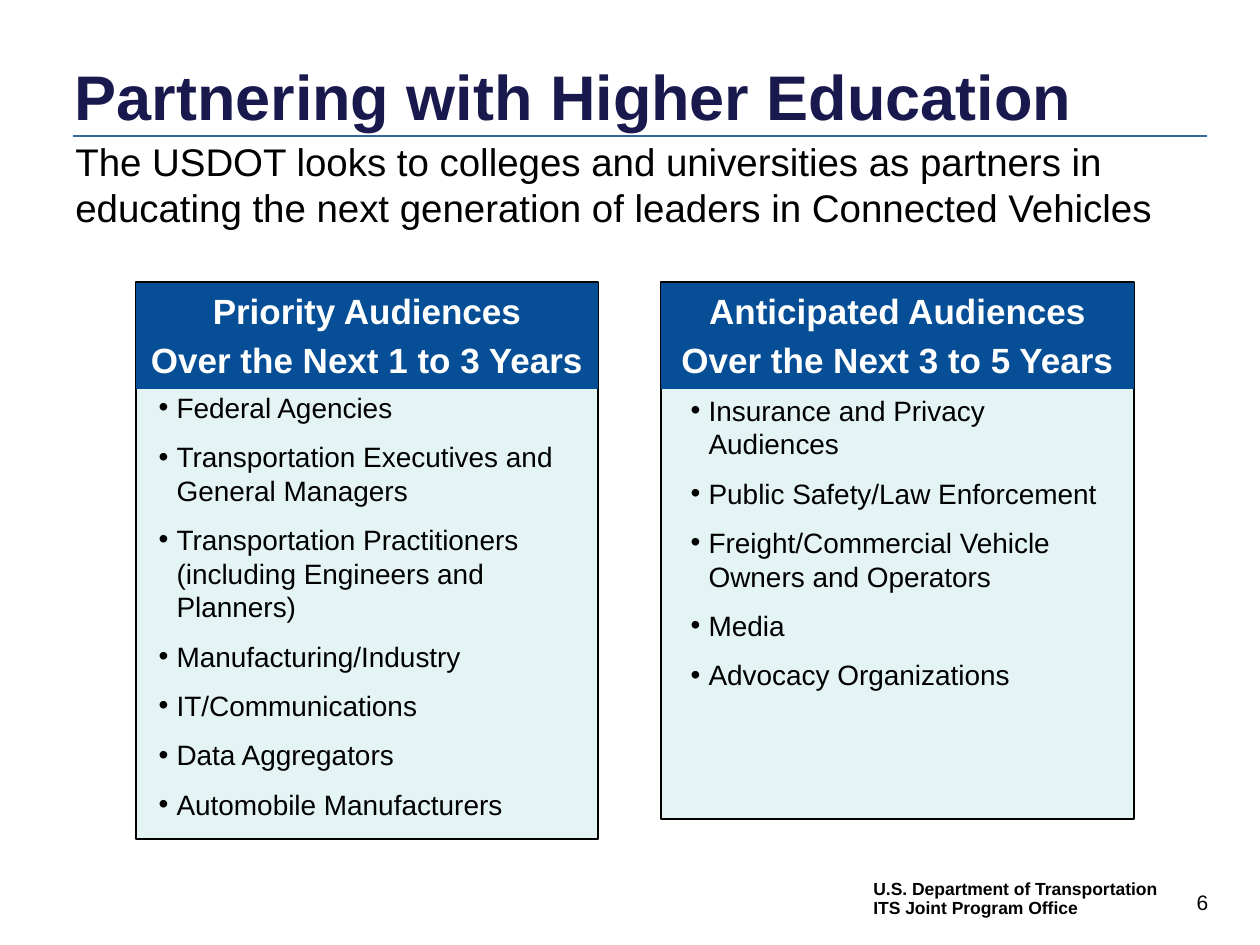
"""Build the slide on partnering with higher education."""
from dataclasses import dataclass

from lxml.etree import SubElement
from pptx import Presentation
from pptx.dml.color import RGBColor
from pptx.enum.shapes import MSO_CONNECTOR, MSO_SHAPE
from pptx.enum.text import MSO_ANCHOR, MSO_AUTO_SIZE, PP_ALIGN
from pptx.oxml.ns import qn
from pptx.util import Emu, Pt

TITLE = "Partnering with Higher Education"
SUBTITLE = ("The USDOT looks to colleges and universities as partners in "
            "educating the next generation of leaders in Connected Vehicles")
FOOTER = ["U.S. Department of Transportation", "ITS Joint Program Office"]
PAGE_NUMBER = "6"
AUDIENCES = [
    {
        "heading": ["Priority Audiences", "Over the Next 1 to 3 Years"],
        "items": [
            "Federal Agencies",
            "Transportation Executives and General Managers",
            "Transportation Practitioners (including Engineers and Planners)",
            "Manufacturing/Industry",
            "IT/Communications",
            "Data Aggregators",
            "Automobile Manufacturers",
        ],
        "panel": (136, 282, 462, 557),
        "list": (146, 384, 441, 459),
    },
    {
        "heading": ["Anticipated Audiences", "Over the Next 3 to 5 Years"],
        "items": [
            "Insurance and Privacy Audiences",
            "Public Safety/Law Enforcement",
            "Freight/Commercial Vehicle Owners and Operators",
            "Media",
            "Advocacy Organizations",
        ],
        "panel": (661, 282, 473, 537),
        "list": (678, 387, 446, 321),
    },
]
HEADING_OFFSET, HEADING_HEIGHT = 1, 106
BULLET_INDENT = 18


@dataclass(frozen=True)
class Theme:
    """Colours and type of the slide."""
    font: str = "Arial"
    navy: str = "19194D"
    rule: str = "336699"
    heading: str = "064E96"
    panel: str = "E4F3F4"
    black: str = "000000"
    white: str = "FFFFFF"
    title_size: int = 36
    subtitle_size: int = 22
    heading_size: int = 20
    item_size: int = 16
    number_size: int = 12
    footer_size: int = 10


THEME = Theme()


def px(length):
    return Emu(round(length * 914400 / 126))


def color(value):
    return RGBColor.from_string(value)


def place(shape, box):
    shape.left, shape.top, shape.width, shape.height = map(px, box)


def add_bullet(paragraph):
    properties = paragraph._p.get_or_add_pPr()
    properties.set("marL", str(px(BULLET_INDENT)))
    properties.set("indent", str(-px(BULLET_INDENT)))
    SubElement(properties, qn("a:buFont"), typeface=THEME.font)
    SubElement(properties, qn("a:buChar"), char="•")


def write(shape, lines, size, ink=THEME.black, bold=False, align=PP_ALIGN.LEFT,
          anchor=MSO_ANCHOR.TOP, before=0, after=0, spacing=None, bullets=False):
    frame = shape.text_frame
    frame.word_wrap = True
    frame.auto_size = MSO_AUTO_SIZE.NONE
    frame.vertical_anchor = anchor
    frame.text = "\n".join(lines)
    for index, paragraph in enumerate(frame.paragraphs):
        if bullets:
            add_bullet(paragraph)
        paragraph.alignment = align
        paragraph.space_before = Pt(before if index else 0)
        paragraph.space_after = Pt(after)
        paragraph.line_spacing = spacing
        font = paragraph.font
        font.name, font.size, font.bold = THEME.font, Pt(size), bold
        font.color.rgb = color(ink)


def add_text(slide, box, lines, size, **style):
    write(slide.shapes.add_textbox(*map(px, box)), lines, size, **style)


def add_rectangle(slide, box, fill, outline=None):
    shape = slide.shapes.add_shape(MSO_SHAPE.RECTANGLE, *map(px, box))
    shape.shadow.inherit = False
    shape.fill.solid()
    shape.fill.fore_color.rgb = color(fill)
    if outline:
        shape.line.color.rgb = color(outline)
        shape.line.width = Pt(0.75)
    else:
        shape.line.fill.background()
    return shape


def add_rule(slide, left, right, top):
    rule = slide.shapes.add_connector(
        MSO_CONNECTOR.STRAIGHT, px(left), px(top), px(right), px(top))
    rule.line.color.rgb = color(THEME.rule)
    rule.line.width = Pt(1.5)
    SubElement(rule.element.spPr, qn("a:effectLst"))


def add_audience(slide, audience, placeholder):
    left, top, width, height = audience["panel"]
    add_rectangle(slide, (left, top, width, height), THEME.panel, THEME.black)
    heading = add_rectangle(
        slide, (left, top + HEADING_OFFSET, width, HEADING_HEIGHT), THEME.heading)
    write(heading, audience["heading"], THEME.heading_size, ink=THEME.white,
          bold=True, align=PP_ALIGN.CENTER, before=4)
    place(placeholder, audience["list"])
    write(placeholder, audience["items"], THEME.item_size,
          before=4.5, after=4.5, bullets=True)
    placeholder.element.getparent().append(placeholder.element)


def main():
    presentation = Presentation()
    presentation.slide_width, presentation.slide_height = px(1260), px(945)
    slide = presentation.slides.add_slide(presentation.slide_layouts[3])
    add_rule(slide, 73, 1207, 136)
    add_text(slide, (1166, 883, 73, 38), [PAGE_NUMBER], THEME.number_size,
             align=PP_ALIGN.CENTER)
    add_text(slide, (861, 877, 325, 49), FOOTER, THEME.footer_size,
             bold=True, before=2, spacing=Pt(9))
    title, *bodies = slide.placeholders
    place(title, (62, 43, 1124, 105))
    write(title, [TITLE], THEME.title_size, ink=THEME.navy, bold=True,
          anchor=MSO_ANCHOR.MIDDLE)
    add_text(slide, (63, 141, 1144, 87), [SUBTITLE], THEME.subtitle_size,
             anchor=MSO_ANCHOR.MIDDLE)
    for audience, body in zip(AUDIENCES, bodies):
        add_audience(slide, audience, body)
    presentation.save("out.pptx")


if __name__ == "__main__":
    main()
